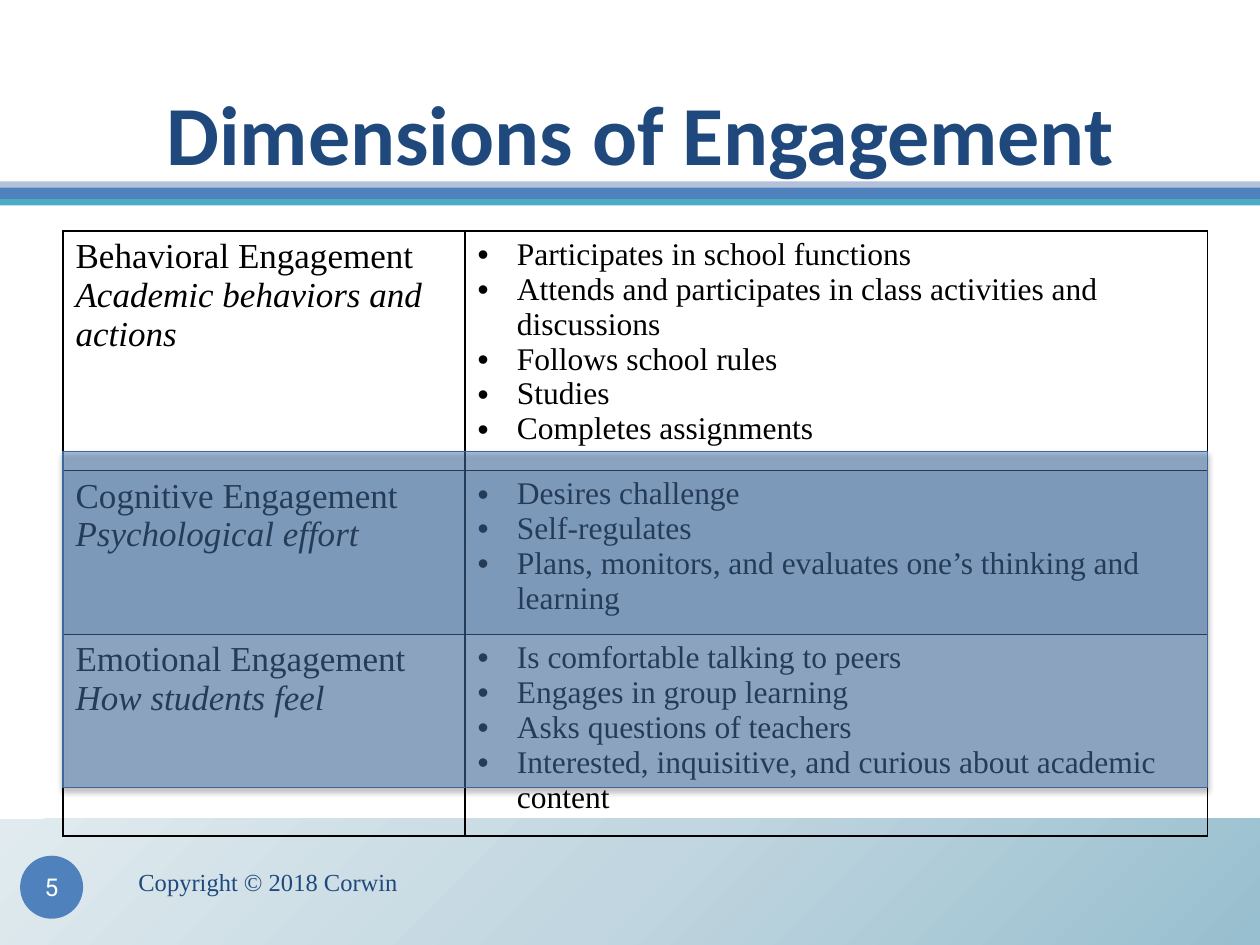
"""Build the Dimensions of Engagement slide."""
import pptx
import pptx.dml.color
import pptx.enum.shapes
import pptx.enum.text
import pptx.oxml
import pptx.oxml.ns
import pptx.util

Pt = pptx.util.Pt
RGB = pptx.dml.color.RGBColor
KIND = pptx.enum.shapes.MSO_SHAPE
ALIGN = pptx.enum.text.PP_ALIGN
ANCHOR = pptx.enum.text.MSO_ANCHOR
NAVY = RGB(0x1F, 0x49, 0x7D)
BLUE = RGB(0x4F, 0x81, 0xBD)
PALE = RGB(0xB3, 0xC1, 0xDB)
TEAL = RGB(0x4B, 0xAC, 0xC6)
EDGE = RGB(0x3B, 0x67, 0x9C)
WHITE = RGB(0xFF, 0xFF, 0xFF)
BLACK = RGB(0, 0, 0)
SERIF = "Times New Roman"
NS = pptx.oxml.ns.nsdecls("a")
qn = pptx.oxml.ns.qn


def write(frame, text, size=18, font=SERIF, color=BLACK, bold=False,
          italic=False, align=ALIGN.LEFT, bullet=False):
    """Add one formatted paragraph, filling an empty first one."""
    para = frame.paragraphs[0]
    if para.text:
        para = frame.add_paragraph()
    para.alignment = align
    if bullet:
        props = para._p.get_or_add_pPr()
        props.set("marL", str(Pt(22.5)))
        props.set("indent", str(-Pt(22.5)))
        props.append(pptx.oxml.parse_xml(f'<a:buFont {NS} typeface="Arial"/>'))
        props.append(pptx.oxml.parse_xml(f'<a:buChar {NS} char="•"/>'))
    run = para.add_run()
    run.text = text
    run.font.size = Pt(size)
    run.font.name = font
    run.font.bold = bold
    run.font.italic = italic
    run.font.color.rgb = color


def draw(kind, left, top, width, height, fill):
    """Add a flat shape without outline."""
    shape = slide.shapes.add_shape(kind, Pt(left), Pt(top), Pt(width), Pt(height))
    shape.shadow.inherit = False
    shape.line.fill.background()
    shape.fill.solid()
    shape.fill.fore_color.rgb = fill
    return shape


deck = pptx.Presentation()
deck.slide_width, deck.slide_height = Pt(720), Pt(540)
slide = deck.slides.add_slide(deck.slide_layouts[5])

foot = draw(KIND.RECTANGLE, 0, 468, 720, 72, WHITE)
props = foot._element.spPr
stops = "".join(
    f'<a:gs pos="{pos}000"><a:srgbClr val="{tint}"/></a:gs>'
    for pos, tint in [(0, "98BFCF"), (50, "C1D6E0"), (100, "E1EBEF")])
props.replace(props.find(qn("a:solidFill")), pptx.oxml.parse_xml(
    f'<a:gradFill {NS} rotWithShape="1"><a:gsLst>{stops}</a:gsLst>'
    '<a:path path="circle"><a:fillToRect l="100000" t="100000"/></a:path>'
    '</a:gradFill>'))

for top, height, fill in [(106.6, 7.2, BLUE), (103.7, 3.6, PALE), (113.8, 3.6, TEAL)]:
    draw(KIND.RECTANGLE, 0, top, 720, height, fill)

title = slide.shapes.title
title.left, title.top, title.width, title.height = Pt(60), Pt(21.6), Pt(612), Pt(90)
frame = title.text_frame
frame.auto_size = pptx.enum.text.MSO_AUTO_SIZE.NONE
frame.vertical_anchor = ANCHOR.BOTTOM
frame.margin_bottom = Pt(7.2)
write(frame, "Dimensions of Engagement", size=48, font="Calibri", color=NAVY,
      bold=True, align=ALIGN.CENTER)

note = slide.shapes.add_textbox(Pt(72), Pt(486), Pt(312), Pt(36)).text_frame
note.word_wrap = True
note.vertical_anchor = ANCHOR.MIDDLE
write(note, "Copyright © 2018 Corwin", size=14, color=NAVY)

badge = draw(KIND.OVAL, 11.5, 489, 36, 36, BLUE).text_frame
badge.margin_left = badge.margin_right = badge.margin_top = badge.margin_bottom = 0
badge.word_wrap = False
badge.vertical_anchor = ANCHOR.MIDDLE
write(badge, "5", size=14, font="Roboto", color=WHITE, align=ALIGN.CENTER)

ROWS = [
    (127.4, "Behavioral Engagement", "Academic behaviors and actions", [
        "Participates in school functions",
        "Attends and participates in class activities and discussions",
        "Follows school rules",
        "Studies",
        "Completes assignments"]),
    (82.8, "Cognitive Engagement", "Psychological effort", [
        "Desires challenge",
        "Self-regulates",
        "Plans, monitors, and evaluates one’s thinking and learning"]),
    (108, "Emotional Engagement", "How students feel", [
        "Is comfortable talking to peers",
        "Engages in group learning",
        "Asks questions of teachers",
        "Interested, inquisitive, and curious about academic content"]),
]
table = slide.shapes.add_table(3, 2, Pt(36), Pt(132), Pt(654), Pt(318.2)).table
table.first_row = table.horz_banding = False
table.columns[0].width, table.columns[1].width = Pt(229.7), Pt(424.3)
for num, (height, head, gist, points) in enumerate(ROWS):
    table.rows[num].height = Pt(height)
    name, list_cell = table.rows[num].cells
    write(name.text_frame, head, size=20)
    write(name.text_frame, gist, size=20, italic=True)
    for point in points:
        write(list_cell.text_frame, point, bullet=True)
    for cell in (name, list_cell):
        props = cell._tc.get_or_add_tcPr()
        for side in ("lnL", "lnR", "lnT", "lnB"):
            props.append(pptx.oxml.parse_xml(
                f'<a:{side} {NS} w="12700"><a:solidFill><a:srgbClr val="000000"/>'
                f'</a:solidFill></a:{side}>'))
        if num == 1:
            cell.fill.solid()
            cell.fill.fore_color.rgb = BLUE
            tint = props.find(qn("a:solidFill"))[0]
            tint.append(pptx.oxml.parse_xml(f'<a:alpha {NS} val="20000"/>'))
        else:
            cell.fill.background()

veil = draw(KIND.RECTANGLE, 36, 258, 654, 192, BLUE)
veil.line.color.rgb = EDGE
veil.line.width = Pt(0.75)
props = veil._element.spPr
props.find(qn("a:solidFill"))[0].append(
    pptx.oxml.parse_xml(f'<a:alpha {NS} val="47000"/>'))
props.find(qn("a:effectLst")).append(pptx.oxml.parse_xml(
    f'<a:outerShdw {NS} blurRad="{Pt(3)}" dist="{Pt(2)}" dir="5400000" rotWithShape="0">'
    '<a:srgbClr val="000000"><a:alpha val="50000"/></a:srgbClr></a:outerShdw>'))

deck.save("out.pptx")
